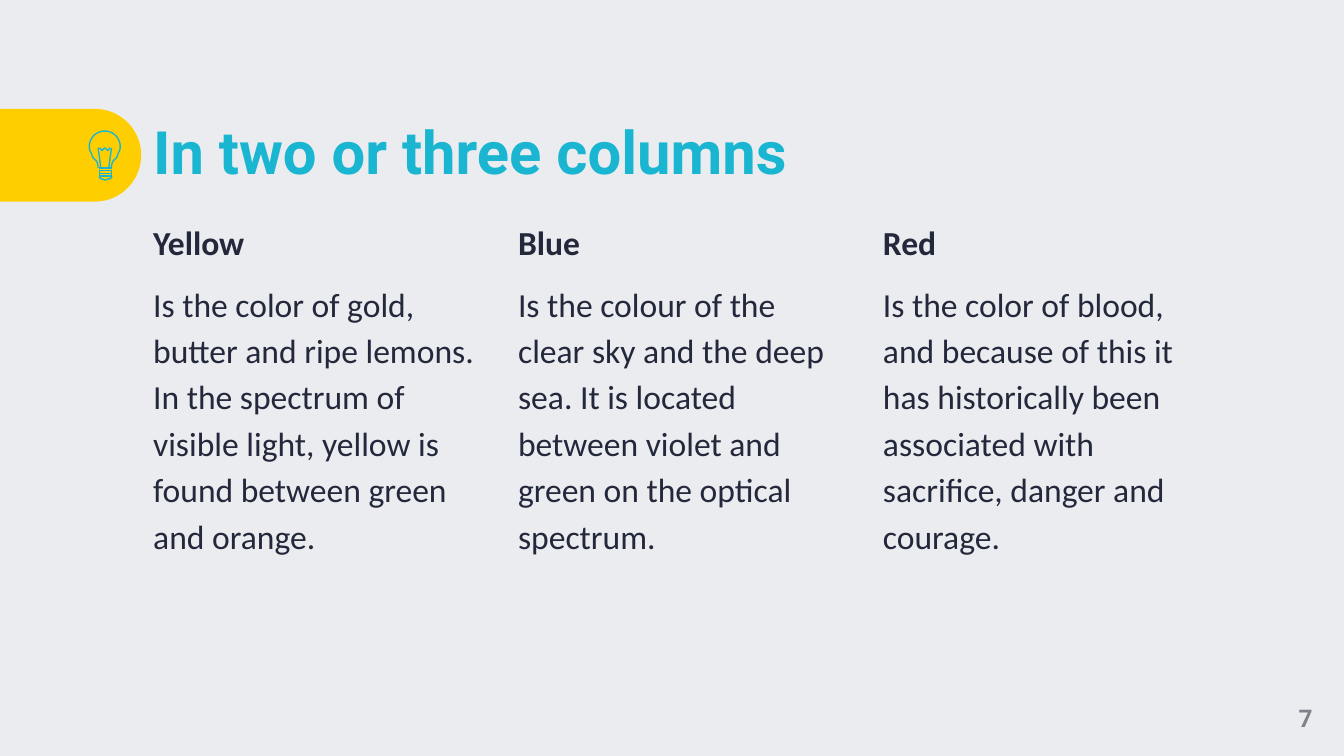
from dataclasses import dataclass
from math import cos, pi, sin

from lxml import etree
from pptx import Presentation
from pptx.dml.color import RGBColor
from pptx.enum.shapes import MSO_CONNECTOR, MSO_SHAPE
from pptx.enum.text import MSO_ANCHOR, PP_ALIGN
from pptx.oxml.ns import qn
from pptx.util import Inches, Pt

TOP, MIDDLE = MSO_ANCHOR.TOP, MSO_ANCHOR.MIDDLE
LEFT, CENTER = PP_ALIGN.LEFT, PP_ALIGN.CENTER
TAB, STRAIGHT = MSO_SHAPE.ROUND_2_SAME_RECTANGLE, MSO_CONNECTOR.STRAIGHT


@dataclass(frozen=True)
class Theme:
    back: str = "EAECF0"
    yellow: str = "FFCE00"
    blue: str = "1AB6D1"
    ink: str = "24283B"
    grey: str = "80828B"
    head: str = "Roboto"
    body: str = "Calibri"
    title: int = 32
    text: int = 18
    small: int = 13
    line: float = 0.75


@dataclass(frozen=True)
class Column:
    name: str
    text: str


@dataclass(frozen=True)
class Stroke:
    points: list
    closed: bool = False


THEME = Theme()
COLUMNS = [
    Column("Yellow", "Is the color of gold, butter and ripe lemons. In the spectrum of "
                     "visible light, yellow is found between green and orange."),
    Column("Blue", "Is the colour of the clear sky and the deep sea. It is located "
                   "between violet and green on the optical spectrum."),
    Column("Red", "Is the color of blood, and because of this it has historically been "
                  "associated with sacrifice, danger and courage."),
]
PAGE = 10  # slide width, at a ratio of 16 to 9
MARGIN, SPAN, WIDTH = 1.14, 7.89, 2.46  # text area and column width


def color(code: str) -> RGBColor:
    return RGBColor.from_string(code)


def add_box(shapes, x: float, y: float, w: float, h: float, anchor=TOP):
    """Add an empty text frame without insets."""
    frame = shapes.add_textbox(Inches(x), Inches(y), Inches(w), Inches(h)).text_frame
    frame.word_wrap = True
    frame.vertical_anchor = anchor
    frame.margin_left = frame.margin_right = 0
    frame.margin_top = frame.margin_bottom = 0
    return frame


def write(para, text: str, *, size: int, font: str, ink: str, bold: bool = True,
          align=LEFT, lines: float = 1.0, space: int = 0) -> None:
    para.alignment = align
    para.line_spacing = lines
    if space:
        para.space_before = para.space_after = Pt(space)
    run = para.add_run()
    run.text = text
    run.font.size = Pt(size)
    run.font.name = font
    run.font.bold = bold
    run.font.color.rgb = color(ink)


def style_line(shape) -> None:
    shape.line.color.rgb = color(THEME.blue)
    shape.line.width = Pt(THEME.line)


def draw_stroke(shapes, stroke: Stroke) -> None:
    points = [(Inches(x), Inches(y)) for x, y in stroke.points]
    pen = shapes.build_freeform(*points[0], scale=1.0)
    pen.add_line_segments(points[1:], close=stroke.closed)
    shape = pen.convert_to_shape()
    shape.shadow.inherit = False
    shape.fill.background()
    style_line(shape)


def draw_bulb(shapes, mid: float = 0.78, level: float = 1.09, size: float = 0.23) -> None:
    """Draw a light bulb that is symmetric about the line x = mid."""
    def flip(points: list) -> list:
        return [(2 * mid - x, y) for x, y in reversed(points)]

    # Screw rings and tip
    left, right = mid - 0.04, mid + 0.05
    strokes = []
    for y in (1.29, 1.27):
        strokes.append(Stroke([(right, y + 0.02), (right, y), (left, y), (left, y + 0.02)], True))
    strokes.append(Stroke([(left, 1.31), (left, 1.32), (left + 0.01, 1.33), (mid, 1.34),
                           (right - 0.01, 1.33), (right, 1.32), (right, 1.31)], True))

    # Glass: a half circle on two mirrored flanks
    radius = size / 2
    flank = [(mid + dx, y) for dx, y in
             [(0.05, 1.25), (0.05, 1.23), (0.06, 1.2), (0.09, 1.17), (0.1, 1.14)]]
    arc = [(mid + radius * cos(k * pi / 24), level - radius * sin(k * pi / 24))
           for k in range(-2, 27)]
    strokes.append(Stroke(flank + arc + flip(flank)))

    # Filament
    wire = [(mid + 0.05, 1.1), (mid + 0.04, 1.17), (mid + 0.03, 1.25)]
    strokes += [Stroke(flip(wire)), Stroke(wire)]
    strokes.append(Stroke([(mid + 0.02 * k, 1.1 + 0.02 * (k % 2)) for k in range(-2, 3)]))
    for stroke in strokes:
        draw_stroke(shapes, stroke)

    # Line under the glass
    base = shapes.add_connector(STRAIGHT, Inches(left), Inches(1.25), Inches(right), Inches(1.25))
    style_line(base)
    etree.SubElement(base._element.spPr, qn("a:effectLst"))


def draw_tab(shapes) -> None:
    tab = shapes.add_shape(TAB, Inches(0.18), Inches(0.63), Inches(0.69), Inches(1.05))
    tab.rotation = 90
    tab.adjustments[0], tab.adjustments[1] = 0.5, 0
    tab.shadow.inherit = False
    tab.fill.solid()
    tab.fill.fore_color.rgb = color(THEME.yellow)
    tab.line.fill.background()


def draw_column(shapes, column: Column, x: float) -> None:
    frame = add_box(shapes, x, 1.61, WIDTH, 3.29)
    look = dict(size=THEME.text, font=THEME.body, ink=THEME.ink, lines=1.15)
    write(frame.paragraphs[0], column.name, **look)
    write(frame.add_paragraph(), column.text, bold=False, space=8, **look)


def main() -> None:
    deck = Presentation()
    deck.slide_width, deck.slide_height = Inches(PAGE), Inches(PAGE * 9 / 16)
    slide = deck.slides.add_slide(deck.slide_layouts[6])
    slide.background.fill.solid()
    slide.background.fill.fore_color.rgb = color(THEME.back)
    shapes = slide.shapes

    # Title with its tab
    draw_tab(shapes)
    title = add_box(shapes, MARGIN, 0.81, SPAN, 0.69, MIDDLE)
    write(title.paragraphs[0], "In two or three columns", size=THEME.title,
          font=THEME.head, ink=THEME.blue, lines=0.9)

    # Columns spread evenly over the text area
    step = (SPAN - WIDTH) / (len(COLUMNS) - 1)
    for i, column in enumerate(COLUMNS):
        draw_column(shapes, column, MARGIN + i * step)

    # Slide number
    number = add_box(shapes, 9.43, 5.06, 0.57, 0.56, MIDDLE)
    write(number.paragraphs[0], "7", size=THEME.small, font=THEME.head,
          ink=THEME.grey, align=CENTER)

    # Icon
    draw_bulb(shapes.add_group_shape().shapes)
    deck.save("out.pptx")


if __name__ == "__main__":
    main()
